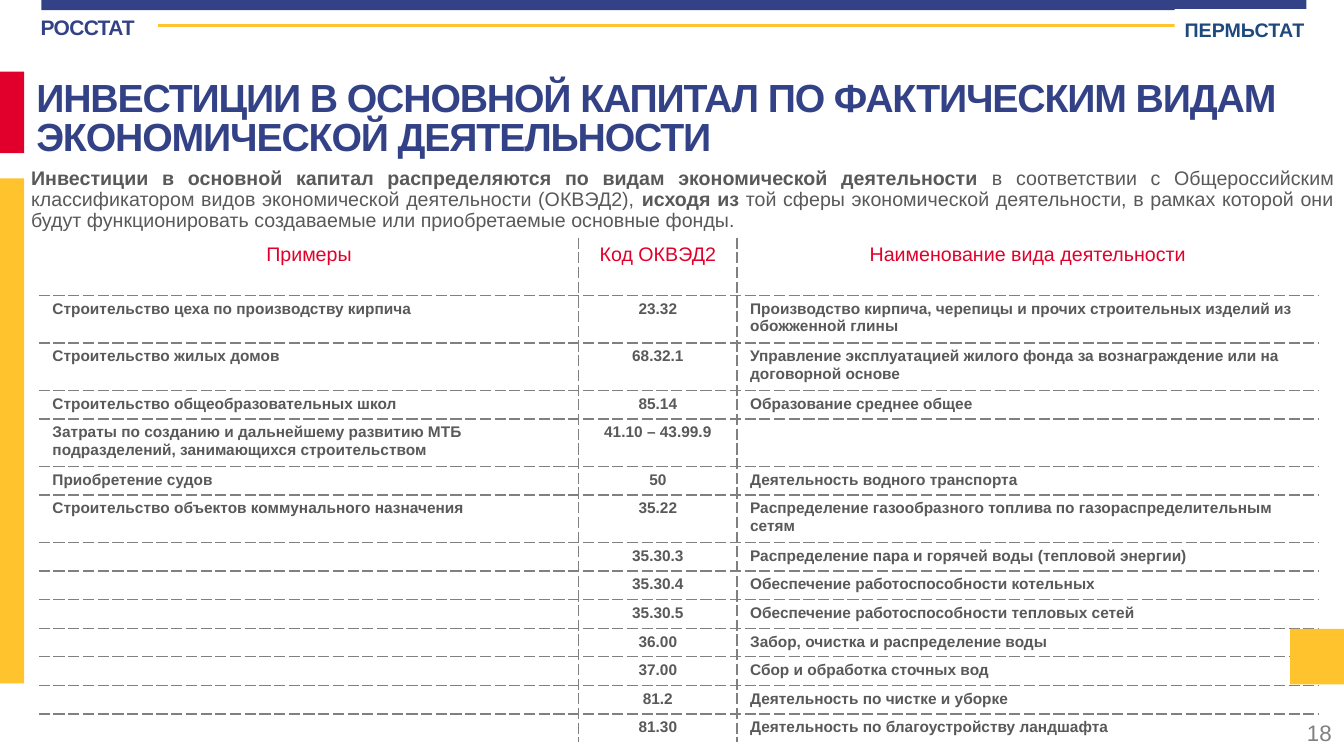
from dataclasses import dataclass

from lxml.etree import SubElement
from pptx import Presentation
from pptx.dml.color import RGBColor
from pptx.enum.shapes import MSO_CONNECTOR, MSO_SHAPE
from pptx.enum.text import MSO_ANCHOR, MSO_AUTO_SIZE, PP_ALIGN
from pptx.oxml.ns import qn
from pptx.util import Inches, Pt


@dataclass(frozen=True)
class Theme:
    """Colours, type sizes and font of the slide."""
    font: str = "Arial"
    navy: str = "334286"
    steel: str = "1F497D"
    red: str = "E1002B"
    yellow: str = "FFC32E"
    text: str = "595959"
    grey: str = "808080"
    white: str = "FFFFFF"
    title: int = 28
    number: int = 16
    agency: int = 15
    body: int = 14
    cell: int = 11


class Deck:
    """Draws elements placed in percent of the slide's width and height."""

    def __init__(self, theme):
        """Open a title-only slide of 13.33 by 7.5 inches."""
        self.t = theme
        self.prs = Presentation()
        self.prs.slide_width, self.prs.slide_height = Inches(13.33), Inches(7.5)
        self.s = self.prs.slides.add_slide(self.prs.slide_layouts[5])

    def x(self, share):
        """Turn a percentage of the width into a length."""
        return round(self.prs.slide_width * share / 100)

    def y(self, share):
        """Turn a percentage of the height into a length."""
        return round(self.prs.slide_height * share / 100)

    def box(self, x, y, w, h):
        """Turn four percentages into left, top, width and height."""
        return self.x(x), self.y(y), self.x(w), self.y(h)

    def add_runs(self, p, runs, size, color, align=PP_ALIGN.LEFT, spacing=None, kern=None):
        """Fill a paragraph with (text, bold) runs."""
        p.alignment = align
        p.line_spacing = spacing
        for text, bold in runs:
            r = p.add_run()
            r.text = text
            r.font.name, r.font.size, r.font.bold = self.t.font, Pt(size), bold
            r.font.color.rgb = RGBColor.from_string(color)
            if kern:
                r._r.get_or_add_rPr().set("spc", str(kern))

    def title(self, box, text):
        """Place the title placeholder and fill it."""
        sp = self.s.shapes.title
        sp.left, sp.top, sp.width, sp.height = self.box(*box)
        tf = sp.text_frame
        tf.word_wrap, tf.auto_size = True, MSO_AUTO_SIZE.NONE
        tf.vertical_anchor = MSO_ANCHOR.TOP
        self.add_runs(tf.paragraphs[0], [(text, True)], self.t.title, self.t.navy,
                      spacing=0.84, kern=-80)

    def text(self, box, runs, size, color, anchor=MSO_ANCHOR.TOP, inset=None, **style):
        """Add a wrapped text box."""
        tf = self.s.shapes.add_textbox(*self.box(*box)).text_frame
        tf.word_wrap, tf.vertical_anchor = True, anchor
        if inset is not None:
            tf.margin_left = tf.margin_top = tf.margin_right = tf.margin_bottom = inset
        self.add_runs(tf.paragraphs[0], runs, size, color, **style)

    def bar(self, box, color):
        """Add a plain filled rectangle."""
        sp = self.s.shapes.add_shape(MSO_SHAPE.RECTANGLE, *self.box(*box))
        sp.shadow.inherit = False
        sp.fill.solid()
        sp.fill.fore_color.rgb = RGBColor.from_string(color)
        sp.line.fill.background()
        return sp

    def label(self, box, text):
        """Add a white plate with an agency name."""
        tf = self.bar(box, self.t.white).text_frame
        tf.word_wrap, tf.vertical_anchor = True, MSO_ANCHOR.TOP
        self.add_runs(tf.paragraphs[0], [(text, True)], self.t.body, self.t.steel, spacing=1.15)

    def rule(self, x1, x2, y, color, width):
        """Add a horizontal line."""
        ln = self.s.shapes.add_connector(MSO_CONNECTOR.STRAIGHT, self.x(x1), self.y(y),
                                         self.x(x2), self.y(y))
        ln.line.color.rgb, ln.line.width = RGBColor.from_string(color), Pt(width)
        SubElement(ln._element.spPr, qn("a:effectLst"))

    def borders(self, cell, sides):
        """Draw dashed lines on the given sides of a cell."""
        tcPr = cell._tc.get_or_add_tcPr()
        for side in sides:
            ln = SubElement(tcPr, qn(f"a:ln{side}"), w=str(Pt(1)))
            fill = SubElement(ln, qn("a:solidFill"))
            SubElement(fill, qn("a:srgbClr"), val=self.t.grey)
            SubElement(ln, qn("a:prstDash"), val="lgDash")

    def cell(self, cell, text, header, align):
        """Fill one table cell, a paragraph to each line."""
        cell.margin_left = cell.margin_right = Inches(0.13)
        cell.margin_top = cell.margin_bottom = Inches(0.05)
        cell.fill.background()
        size, color = (self.t.body, self.t.red) if header else (self.t.cell, self.t.text)
        tf = cell.text_frame
        for i, line in enumerate(text.split("\n")):
            p = tf.add_paragraph() if i else tf.paragraphs[0]
            self.add_runs(p, [(line, not header)] if line else [], size, color, align)
            if not line:
                p._p.get_or_add_endParaRPr().set("sz", str(size * 100))

    def table(self, x, y, widths, heights, rows):
        """Add a table with dashed inner lines."""
        frame = self.s.shapes.add_table(len(rows), len(widths),
                                        *self.box(x, y, sum(widths), sum(heights)))
        tbl = frame.table
        tbl.first_row = tbl.horz_banding = False
        for col, w in zip(tbl.columns, widths):
            col.width = self.x(w)
        for i, (row, h) in enumerate(zip(rows, heights)):
            tbl.rows[i].height = self.y(h)
            for j, text in enumerate(row):
                inner = {"L": j > 0, "R": j < len(widths) - 1,
                         "T": i > 0, "B": i < len(rows) - 1}
                self.borders(tbl.cell(i, j), [side for side, on in inner.items() if on])
                align = PP_ALIGN.CENTER if i == 0 or j == 1 else PP_ALIGN.LEFT
                self.cell(tbl.cell(i, j), text, i == 0, align)


ACTIVITIES = [
    ("Примеры", "Код ОКВЭД2", "Наименование вида деятельности"),
    ("Строительство цеха по производству кирпича", "23.32",
     "Производство кирпича, черепицы и прочих строительных изделий из обожженной глины"),
    ("Строительство жилых домов", "68.32.1",
     "Управление эксплуатацией жилого фонда за вознаграждение или на договорной основе"),
    ("Строительство общеобразовательных школ", "85.14", "Образование среднее общее"),
    ("Затраты по созданию и дальнейшему развитию МТБ\n"
     "подразделений, занимающихся строительством", "41.10 – 43.99.9", ""),
    ("Приобретение судов", "50", "Деятельность водного транспорта"),
    ("Строительство объектов коммунального назначения", "35.22",
     "Распределение газообразного топлива по газораспределительным сетям"),
    ("", "35.30.3", "Распределение пара и горячей воды (тепловой энергии)"),
    ("", "35.30.4", "Обеспечение работоспособности котельных"),
    ("", "35.30.5", "Обеспечение работоспособности тепловых сетей"),
    ("", "36.00", "Забор, очистка и распределение воды"),
    ("", "37.00", "Сбор и обработка сточных вод"),
    ("", "81.2", "Деятельность по чистке и уборке"),
    ("", "81.30", "Деятельность по благоустройству ландшафта"),
]
INTRO = [
    ("Инвестиции в основной капитал распределяются по видам экономической деятельности", True),
    (" в соответствии с Общероссийским классификатором видов экономической деятельности "
     "(ОКВЭД2), ", False),
    ("исходя из ", True),
    ("той сферы экономической деятельности, в рамках которой они будут функционировать "
     "создаваемые или приобретаемые основные фонды.", False),
]


def main():
    """Build the slide and save it."""
    t = Theme()
    d = Deck(t)
    d.text((3.03, 1.9, 8.63, 4.27), [("РОССТАТ", True)], t.agency, t.navy, inset=0, kern=-50)
    d.bar((3.08, 0, 94.12, 1.33), t.navy)
    d.bar((0, 9.47, 1.8, 10.8), t.red)
    d.bar((0, 23.6, 1.8, 66.8), t.yellow)
    d.text((77.33, 94.27, 22.5, 5.33), [("18", False)], t.number, t.grey,
           anchor=MSO_ANCHOR.MIDDLE, align=PP_ALIGN.RIGHT)
    d.title((1.95, 10, 98.05, 11), "ИНВЕСТИЦИИ В ОСНОВНОЙ КАПИТАЛ ПО ФАКТИЧЕСКИМ ВИДАМ "
            "ЭКОНОМИЧЕСКОЙ ДЕЯТЕЛЬНОСТИ")
    d.text((1.58, 21.6, 98.42, 9.87), INTRO, t.body, t.text,
           align=PP_ALIGN.JUSTIFY, spacing=0.9)
    one_line, two_lines = 3.78, 6.27
    heights = [7.6] + [two_lines if i in (1, 2, 4, 6) else one_line
                       for i in range(1, len(ACTIVITIES))]
    d.table(2.93, 31.5, [40.13, 11.78, 43.28], heights, ACTIVITIES)
    d.bar((96, 83.2, 4, 7.33), t.yellow)
    d.rule(11.78, 97.13, 3.33, t.yellow, 2)
    d.label((87.4, 1.2, 11.48, 4.53), "ПЕРМЬСТАТ")
    d.prs.save("out.pptx")


if __name__ == "__main__":
    main()
